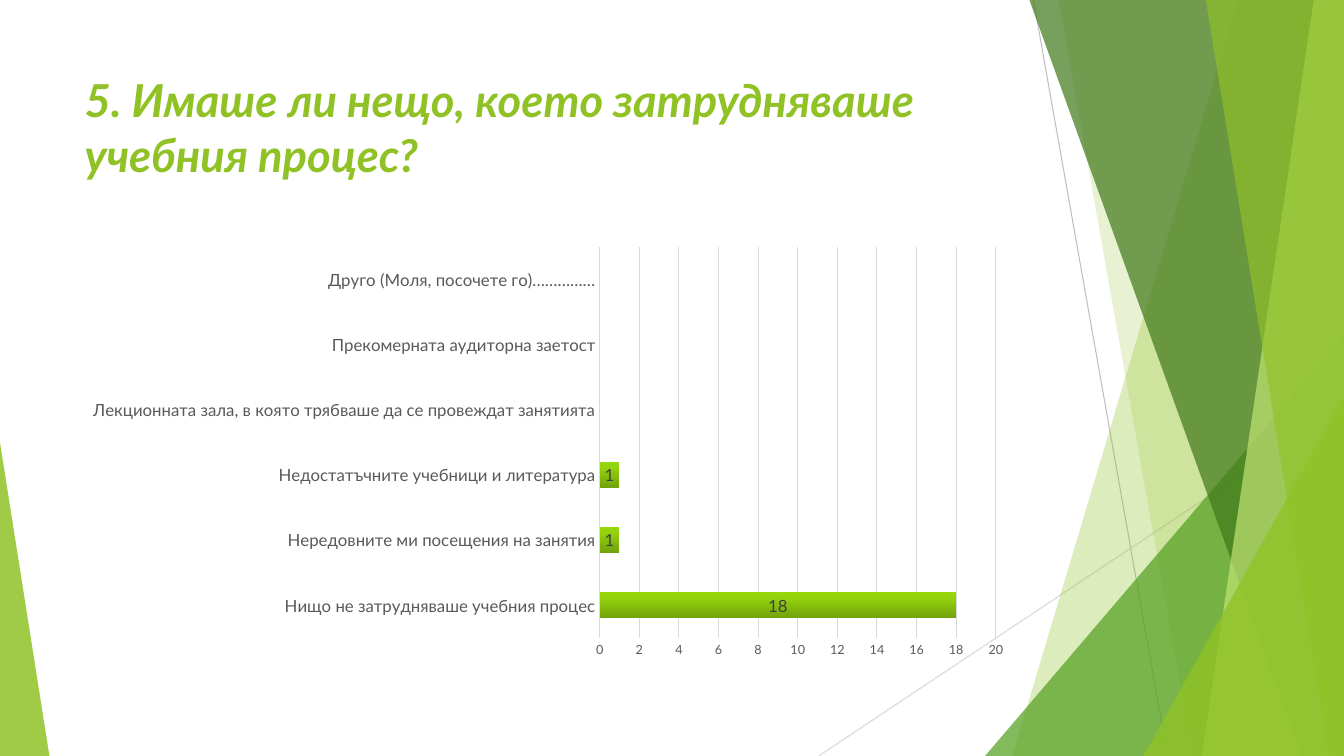
from dataclasses import dataclass

from lxml import etree
from pptx import Presentation
from pptx import oxml
from pptx import util as u
from pptx.chart import data as cd
from pptx.dml import color as col
from pptx.enum import chart as ch, shapes, text
from pptx.oxml import ns


@dataclass(frozen=True)
class Theme:
    font: str = "Lato"
    lime: str = "90C226"
    green: str = "54A021"
    dark: str = "3F7819"
    pale: str = "C0E474"
    line: str = "D9D9D9"
    rule: str = "BFBFBF"
    axis: str = "595959"
    label: str = "404040"
    bar: tuple = ((0, "72A20B"), (80, "94D30E"), (100, "96D70A"))
    title: float = 32.4
    cat: int = 12
    tick: int = 9


T = Theme()
WIDE, HIGH = 13.33, 7.5
TITLE = "5. Имаше ли нещо, което затрудняваше учебния процес?"
ANSWERS = [
    ("Нищо не затрудняваше учебния процес", 18),
    ("Нередовните ми посещения на занятия", 1),
    ("Недостатъчните учебници и литература", 1),
    ("Лекционната зала, в която трябваше да се провеждат занятията", None),
    ("Прекомерната аудиторна заетост", None),
    ("Друго (Моля, посочете го)……………", None),
]


def rgb(tone):
    return col.RGBColor.from_string(tone)


def tint(shape, tone, alpha):
    """Fill a shape with a see-through tone, without line or shadow."""
    shape.shadow.inherit = False
    shape.line.fill.background()
    shape.fill.solid()
    shape.fill.fore_color.rgb = rgb(tone)
    clr = shape.fill._xPr.find(".//" + ns.qn("a:srgbClr"))
    etree.SubElement(clr, ns.qn("a:alpha"), val=str(alpha * 1000))


def add_rule(slide, start, end, tone):
    rule = slide.shapes.add_connector(
        shapes.MSO_CONNECTOR.STRAIGHT, *map(u.Inches, start + end))
    rule.line.color.rgb = rgb(tone)
    rule.line.width = u.Pt(0.75)
    etree.SubElement(rule._element.spPr, ns.qn("a:effectLst"))


def add_band(slide, top, foot, tone, alpha):
    """Full-height band from a slanted left edge to the slide's right side."""
    spots = [(top, 0), (WIDE, 0), (WIDE, HIGH), (foot, HIGH)]
    first, *rest = [(u.Inches(x), u.Inches(y)) for x, y in spots]
    path = slide.shapes.build_freeform(*first)
    path.add_line_segments(rest, close=True)
    tint(path.convert_to_shape(), tone, alpha)


def add_wedge(slide, left, top, width, peak, tone, alpha):
    """Triangle that stands on the slide's lower edge."""
    wedge = slide.shapes.add_shape(
        shapes.MSO_SHAPE.ISOSCELES_TRIANGLE,
        *map(u.Inches, (left, top, width, HIGH - top)))
    wedge.adjustments[0] = peak
    tint(wedge, tone, alpha)


def add_decor(slide):
    add_rule(slide, (10.25, 0), (11.58, HIGH), T.rule)
    add_rule(slide, (WIDE, 4.03), (8.12, HIGH), T.line)
    add_band(slide, 12.28, 10.04, T.lime, 30)
    add_band(slide, 10.5, 11.83, T.lime, 20)
    add_wedge(slide, 9.77, 3.33, 3.56, 1, T.green, 72)
    add_band(slide, 10.21, 12.91, T.dark, 70)
    add_band(slide, 13.03, 11.92, T.pale, 70)
    add_band(slide, 11.96, 13.18, T.lime, 65)
    add_wedge(slide, 11.34, 3.93, 1.99, 1, T.lime, 80)
    add_wedge(slide, 0, 4.39, 0.49, 0, T.lime, 85)


def set_font(font, size, tone):
    font.name = T.font
    font.size = u.Pt(size)
    font.color.rgb = rgb(tone)


def add_title(slide, box):
    frame = slide.shapes.add_textbox(*map(u.Inches, box)).text_frame
    frame.word_wrap = True
    frame.vertical_anchor = text.MSO_ANCHOR.TOP
    para = frame.paragraphs[0]
    para.text = TITLE
    set_font(para.font, T.title, T.lime)
    para.font.bold = para.font.italic = True


def set_grad(series):
    """Vertical gradient that runs from the bar's foot to its top."""
    stops = "".join(
        f'<a:gs pos="{at * 1000}"><a:srgbClr val="{tone}"/></a:gs>'
        for at, tone in T.bar)
    series._element.get_or_add_spPr().append(oxml.parse_xml(
        f'<a:gradFill {ns.nsdecls("a")}><a:gsLst>{stops}</a:gsLst>'
        '<a:lin ang="16200000" scaled="0"/></a:gradFill>'))


def set_plot(chart, box, area):
    """Pin the inner plot area, given in slide inches, inside the chart box."""
    left, top, width, height = box
    x, y, wide, high = area
    parts = {"x": (x - left) / width, "y": (y - top) / height,
             "w": wide / width, "h": high / height}
    modes = '<c:xMode val="edge"/><c:yMode val="edge"/>'
    sizes = "".join(f'<c:{key} val="{val:.3f}"/>' for key, val in parts.items())
    plot = chart._chartSpace.chart.plotArea
    for old in plot.findall(ns.qn("c:layout")):
        plot.remove(old)
    plot.insert(0, oxml.parse_xml(
        f'<c:layout {ns.nsdecls("c")}><c:manualLayout>'
        f'<c:layoutTarget val="inner"/>{modes}{sizes}'
        '</c:manualLayout></c:layout>'))


def add_bars(slide, box):
    names, counts = zip(*ANSWERS)
    data = cd.CategoryChartData()
    data.categories = names
    data.add_series("Series 1", counts)
    chart = slide.shapes.add_chart(
        ch.XL_CHART_TYPE.BAR_STACKED, *map(u.Inches, box), data).chart
    chart.has_legend = chart.has_title = False
    chart.font.name = T.font
    chart.font.size = u.Pt(10)
    set_plot(chart, box, (5.95, 2.45, 3.93, 3.88))

    # Axes
    cat, val = chart.category_axis, chart.value_axis
    for axis, size in ((cat, T.cat), (val, T.tick)):
        axis.major_tick_mark = axis.minor_tick_mark = ch.XL_TICK_MARK.NONE
        set_font(axis.tick_labels.font, size, T.axis)
    cat.format.line.color.rgb = rgb(T.line)
    cat.format.line.width = u.Pt(1)
    val.format.line.fill.background()
    val.minimum_scale, val.maximum_scale, val.major_unit = 0, 20, 2
    val.has_major_gridlines = True
    grid = val.major_gridlines.format.line
    grid.color.rgb = rgb(T.line)
    grid.width = u.Pt(0.75)

    # Bars and their values
    plot = chart.plots[0]
    plot.gap_width, plot.overlap = 150, 100
    plot.vary_by_categories = False
    set_grad(plot.series[0])
    labels = plot.series[0].data_labels
    labels.show_value = True
    labels.position = ch.XL_LABEL_POSITION.CENTER
    set_font(labels.font, T.cat, T.label)


def main():
    deck = Presentation()
    deck.slide_width, deck.slide_height = u.Inches(WIDE), u.Inches(HIGH)
    slide = deck.slides.add_slide(deck.slide_layouts[6])
    add_decor(slide)
    add_title(slide, (0.74, 0.67, 9.4, 1.44))
    add_bars(slide, (0.74, 2.36, 9.4, 4.24))
    deck.save("out.pptx")


if __name__ == "__main__":
    main()
